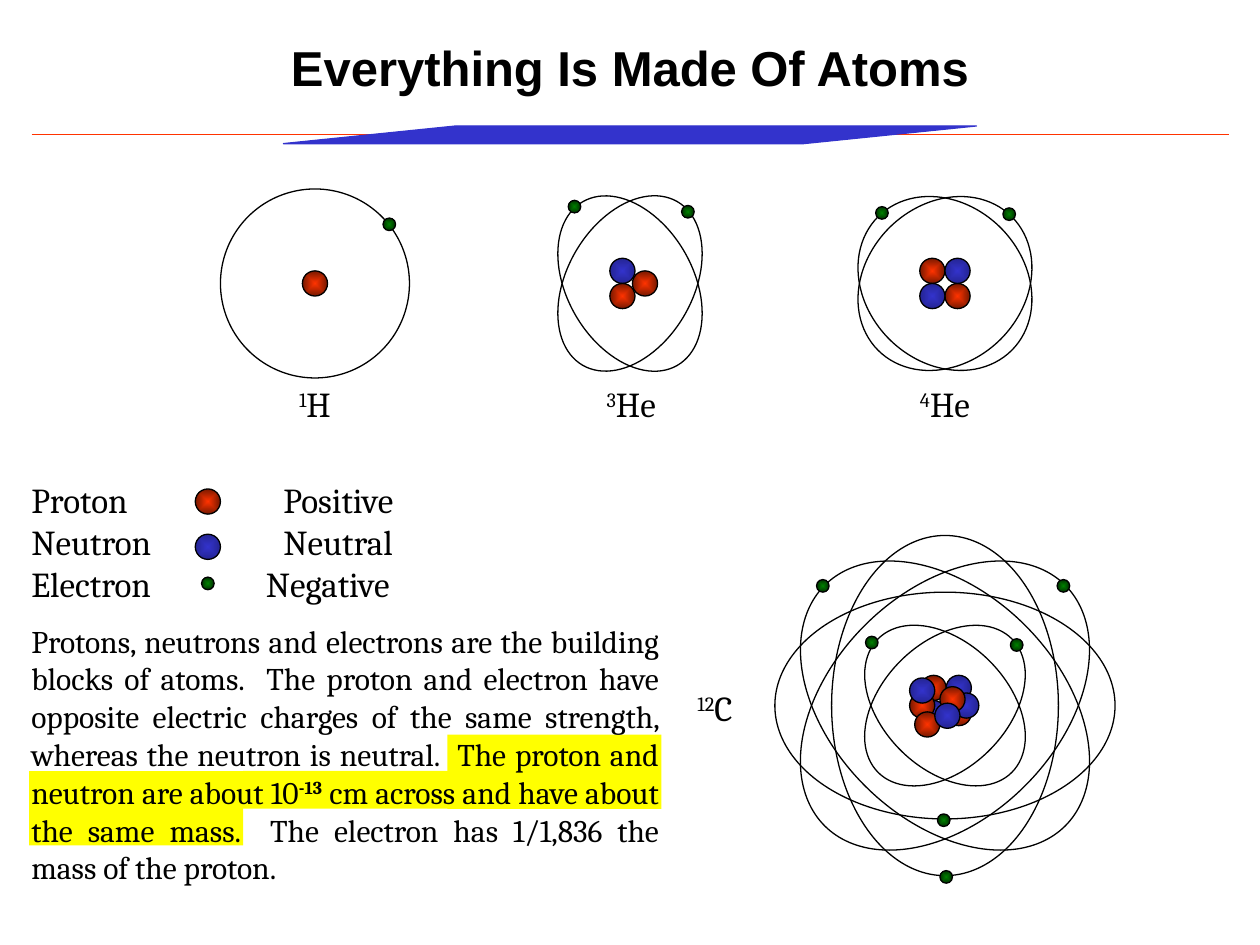
import pptx
import pptx.dml.color
import pptx.enum.shapes
import pptx.enum.text
import pptx.oxml
import pptx.util
from lxml import etree

Pt = pptx.util.Pt
SHAPES = pptx.enum.shapes.MSO_SHAPE
ALIGN = pptx.enum.text.PP_ALIGN
ANCHOR = pptx.enum.text.MSO_ANCHOR
DRAWING = "http://schemas.openxmlformats.org/drawingml/2006/main"

PARTICLES = {
    "proton": (14.4, "FF3300", "761800"),
    "neutron": (14.4, "3333CC", "242492"),
    "electron": (7.2, "008000", "002F00"),
}

ATOMS = [
    {"center": (180, 162), "label": ("1", "H", 180, 230.8),
     "orbits": [(108, 108, 0)],
     "particles": [("proton", 0, 0), ("electron", 42.5, -33.8)]},
    {"center": (360, 162), "label": ("3", "He", 360.7, 230.8),
     "orbits": [(108, 72, 120), (108, 72, 240)],
     "particles": [("electron", 33.1, -41), ("electron", -31.7, -43.9),
                   ("neutron", -4.3, -7.2), ("proton", 8.6, 0), ("proton", -4.3, 7.2)]},
    {"center": (540, 162), "label": ("4", "He", 540, 230.8),
     "orbits": [(108, 90, 45), (108, 90, 315)],
     "particles": [("proton", -7.2, -7.2), ("proton", 7.2, 7.2),
                   ("neutron", -7.2, 7.2), ("neutron", 7.2, -7.2),
                   ("electron", -36, -40.3), ("electron", 36.7, -39.6)]},
    {"center": (540, 403.2), "label": ("12", "C", 408.6, 404.3),
     "orbits": [(108, 72, 45), (108, 72, 315)]
     + [(194.4, 129.6, angle) for angle in (45, 315, 90, 0)],
     "particles": [("proton", -6.5, -10.1), ("proton", 7.9, 4.3),
                   ("neutron", -6.5, 4.3), ("neutron", 7.9, -10.1),
                   ("proton", -13, 0), ("neutron", 12.2, 0),
                   ("proton", -10.1, 10.8), ("proton", 4.3, -3.6),
                   ("neutron", 1.4, 5.8), ("neutron", -13, -8.6),
                   ("electron", -69.8, -68.4), ("electron", 67.7, -68.4),
                   ("electron", 0.7, 97.9), ("electron", -0.7, 65.5),
                   ("electron", -41.8, -36), ("electron", 41, -34.6)]},
]

LEGEND = [
    ("Proton", "Positive", 144, 286.6),
    ("Neutron", "Neutral", 144, 312.5),
    ("Electron", "Negative", 134, 333.4),
]

BODY = [
    ("Protons, neutrons and electrons are the building blocks of atoms.  "
     "The proton and electron have opposite electric charges of the same strength, "
     "whereas the neutron is neutral.  The proton and neutron are about 10", False),
    ("-13", True),
    (" cm across and have about the same mass.  "
     "The electron has 1/1,836 the mass of the proton.", False),
]


def color(value):
    """Turn a hex string into a colour."""
    return pptx.dml.color.RGBColor.from_string(value)


def add_shape(slide, kind, left, top, width, height, fill=None, line=None):
    """Add a preset shape with an optional solid fill and thin outline."""
    shape = slide.shapes.add_shape(kind, Pt(left), Pt(top), Pt(width), Pt(height))
    shape.shadow.inherit = False
    if fill:
        shape.fill.solid()
        shape.fill.fore_color.rgb = color(fill)
    else:
        shape.fill.background()
    if line:
        shape.line.color.rgb = color(line)
        shape.line.width = Pt(0.75)
    else:
        shape.line.fill.background()
    return shape


def add_ellipse(slide, x, y, width, height, angle=0):
    """Add an outlined ellipse around a centre point."""
    ellipse = add_shape(slide, SHAPES.OVAL, x - width / 2, y - height / 2,
                        width, height, line="000000")
    ellipse.rotation = angle
    return ellipse


def add_particle(slide, kind, x, y):
    """Add a ball with a gradient that darkens from its centre."""
    size, inner, outer = PARTICLES[kind]
    ball = add_ellipse(slide, x, y, size, size)
    ball.fill.gradient()
    for stop, value in zip(ball.fill.gradient_stops, (inner, outer)):
        stop.color.rgb = color(value)
    linear = next(ball._element.iter(f"{{{DRAWING}}}lin"))
    shading = pptx.oxml.parse_xml(
        f'<a:path xmlns:a="{DRAWING}" path="shape">'
        '<a:fillToRect l="50000" t="50000" r="50000" b="50000"/></a:path>')
    linear.getparent().replace(linear, shading)


def add_textbox(slide, left, top, width, height, **formats):
    """Add a text box and return its text frame."""
    box = slide.shapes.add_textbox(Pt(left), Pt(top), Pt(width), Pt(height))
    for name, value in {"word_wrap": True, **formats}.items():
        setattr(box.text_frame, name, value)
    return box.text_frame


def add_span(para, text, raised=False, **formats):
    """Add a run of text, raised as a superscript if asked."""
    span = para.add_run()
    span.text = text
    span.font.color.rgb = color("000000")
    for name, value in {"name": "Cambria", "size": Pt(20), **formats}.items():
        setattr(span.font, name, value)
    if raised:
        span.font._element.set("baseline", "30000")


def add_tab_stop(para, position):
    """Give a paragraph one left tab stop."""
    tabs = etree.SubElement(para._p.get_or_add_pPr(), f"{{{DRAWING}}}tabLst")
    etree.SubElement(tabs, f"{{{DRAWING}}}tab", pos=str(Pt(position)), algn="l")


def add_header(slide):
    """Add the title with the rule and bar below it."""
    rule = slide.shapes.add_connector(pptx.enum.shapes.MSO_CONNECTOR.STRAIGHT,
                                      Pt(18), Pt(77), Pt(702), Pt(77))
    rule.line.color.rgb = color("FF3300")
    rule.line.width = Pt(0.75)
    etree.SubElement(rule._element.spPr, f"{{{DRAWING}}}effectLst")
    bar = add_shape(slide, SHAPES.PARALLELOGRAM, 162, 72, 396, 10.1, "3333CC", "3333CC")
    bar.adjustments[0] = 9.78
    frame = add_textbox(slide, 18, 8.6, 684, 59.8, vertical_anchor=ANCHOR.MIDDLE)
    para = frame.paragraphs[0]
    para.alignment = ALIGN.CENTER
    add_span(para, "Everything Is Made Of Atoms", name="Arial", size=Pt(28), bold=True)


def add_atom(slide, atom):
    """Add the particles, orbits and label of an atom."""
    x, y = atom["center"]
    for width, height, angle in atom["orbits"]:
        add_ellipse(slide, x, y, width, height, angle)
    for kind, across, down in atom["particles"]:
        add_particle(slide, kind, x + across, y + down)
    mass, symbol, label_x, label_y = atom["label"]
    frame = add_textbox(slide, label_x - 22, label_y - 15.5, 44, 31, word_wrap=False)
    para = frame.paragraphs[0]
    para.alignment = ALIGN.CENTER
    add_span(para, mass, raised=True)
    add_span(para, symbol)


def add_explanation(slide):
    """Add the particle legend and the highlighted paragraph."""
    for left, top, width, height in ((139, 440.6, 117.4, 21.6),
                                     (16.6, 440.6, 122.4, 42.5),
                                     (255.6, 419.8, 122.4, 42.5)):
        add_shape(slide, SHAPES.RECTANGLE, left, top, width, height, "FFFF00")
    frame = add_textbox(slide, 10.8, 270, 373, 240.5)
    para = frame.paragraphs[0]
    for name, charge, tab, y in LEGEND:
        add_tab_stop(para, tab)
        add_span(para, f"{name}\t{charge}")
        add_particle(slide, name.lower(), 118.8, y)
        para = frame.add_paragraph()
    para.alignment = ALIGN.JUSTIFY
    para.space_before = Pt(9.6)
    for text, raised in BODY:
        add_span(para, text, raised, size=Pt(18), bold=raised)


def main():
    """Build the slide and save the deck."""
    deck = pptx.Presentation()
    deck.slide_width, deck.slide_height = Pt(720), Pt(540)
    slide = deck.slides.add_slide(deck.slide_layouts[6])
    add_header(slide)
    for atom in ATOMS:
        add_atom(slide, atom)
    add_explanation(slide)
    deck.save("out.pptx")


if __name__ == "__main__":
    main()
